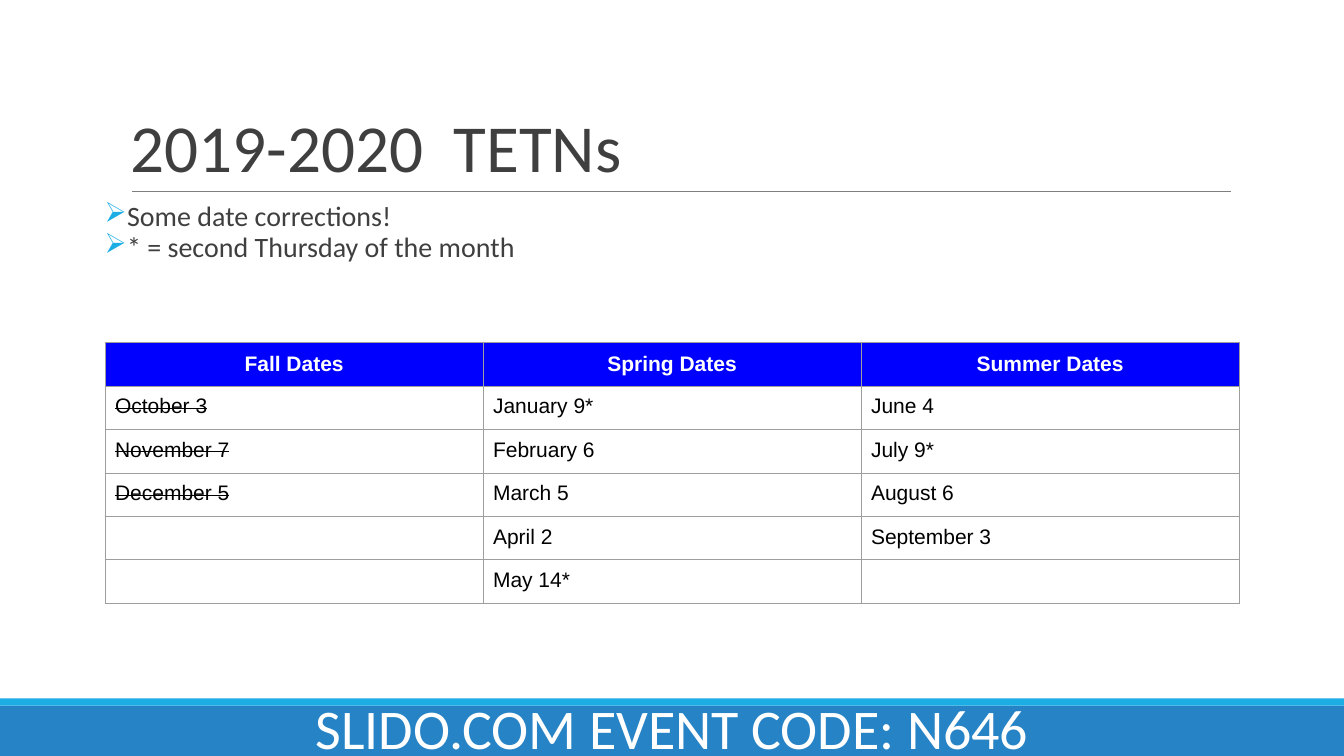
from lxml import etree
from pptx import Presentation
from pptx.dml.color import RGBColor
from pptx.enum.shapes import MSO_CONNECTOR, MSO_SHAPE
from pptx.enum.text import MSO_ANCHOR, PP_ALIGN
from pptx.oxml.ns import qn
from pptx.util import Cm, Pt

STRAIGHT = MSO_CONNECTOR.STRAIGHT
RECTANGLE = MSO_SHAPE.RECTANGLE
LEFT, CENTER = PP_ALIGN.LEFT, PP_ALIGN.CENTER
TOP, MIDDLE, BOTTOM = MSO_ANCHOR.TOP, MSO_ANCHOR.MIDDLE, MSO_ANCHOR.BOTTOM

COLORS = {
    "text": "3F3F3F",
    "accent": "1CADE4",
    "footer": "2683C6",
    "rule": "7F7F7F",
    "header": "0000FF",
    "border": "9E9E9E",
    "white": "FFFFFF",
    "black": "000000",
}
SLIDE_WIDTH, SLIDE_HEIGHT = 33.87, 19.05
NOTES = ["Some date corrections!", "* = second Thursday of the month"]
DATES = [
    ["Fall Dates", "Spring Dates", "Summer Dates"],
    ["October 3", "January 9*", "June 4"],
    ["November 7", "February 6", "July 9*"],
    ["December 5", "March 5", "August 6"],
    ["", "April 2", "September 3"],
    ["", "May 14*", ""],
]
PAST_DATES = {"October 3", "November 7", "December 5"}


def color(name):
    """Return the named colour."""
    return RGBColor.from_string(COLORS[name])


def style(paragraph, font, size, color_name, align=LEFT, bold=False):
    """Set the font and alignment of a paragraph."""
    paragraph.alignment = align
    paragraph.font.name = font
    paragraph.font.size = Pt(size)
    paragraph.font.bold = bold
    paragraph.font.color.rgb = color(color_name)


def add_text_box(page, box, anchor=TOP, side_margin=0.25):
    """Add a wrapping text box and return its text frame."""
    frame = page.shapes.add_textbox(*map(Cm, box)).text_frame
    frame.word_wrap = True
    frame.vertical_anchor = anchor
    frame.margin_left = frame.margin_right = Cm(side_margin)
    frame.margin_top = frame.margin_bottom = Cm(0.13)
    return frame


def add_bullet(paragraph):
    """Give a paragraph a Wingdings arrow bullet with a hanging indent."""
    properties = paragraph._p.get_or_add_pPr()
    properties.set("marL", str(Cm(0.25)))
    properties.set("indent", str(-Cm(0.25)))
    bullet_color = etree.SubElement(properties, qn("a:buClr"))
    etree.SubElement(bullet_color, qn("a:srgbClr"), val=COLORS["accent"])
    etree.SubElement(properties, qn("a:buFont"), typeface="Wingdings", charset="2")
    etree.SubElement(properties, qn("a:buChar"), char="Ø")


def add_bar(page, box, color_name):
    """Add a plain filled bar."""
    bar = page.shapes.add_shape(RECTANGLE, *map(Cm, box))
    bar.shadow.inherit = False
    bar.fill.solid()
    bar.fill.fore_color.rgb = color(color_name)
    bar.line.fill.background()


def add_title(page, box):
    """Add the title with the rule along its bottom edge."""
    left, top, width, height = box
    paragraph = add_text_box(page, box, BOTTOM).paragraphs[0]
    paragraph.text = "2019-2020  TETNs"
    paragraph.line_spacing = 0.85
    style(paragraph, "Calibri", 48, "text")
    start, bottom = left + 0.28, top + height
    rule = page.shapes.add_connector(
        STRAIGHT, Cm(start), Cm(bottom), Cm(start + 27.68), Cm(bottom))
    rule.line.color.rgb = color("rule")
    rule.line.width = Pt(0.75)
    etree.SubElement(rule._element.spPr, qn("a:effectLst"))


def add_notes(page, box):
    """Add the bulleted remarks."""
    frame = add_text_box(page, box, side_margin=0)
    for index, note in enumerate(NOTES):
        paragraph = frame.add_paragraph() if index else frame.paragraphs[0]
        paragraph.text = note
        add_bullet(paragraph)
        paragraph.line_spacing = 0.9
        style(paragraph, "Calibri", 20, "text")


def add_borders(cell):
    """Draw the four borders of a cell."""
    properties = cell._tc.get_or_add_tcPr()
    for index, side in enumerate(("lnL", "lnR", "lnT", "lnB")):
        line = etree.Element(qn(f"a:{side}"), w=str(Pt(0.75)))
        fill = etree.SubElement(line, qn("a:solidFill"))
        etree.SubElement(fill, qn("a:srgbClr"), val=COLORS["border"])
        properties.insert(index, line)


def fill_cell(cell, text, is_header):
    """Fill one table cell with its colour, borders and date."""
    cell.fill.solid()
    cell.fill.fore_color.rgb = color("header" if is_header else "white")
    add_borders(cell)
    if not text:
        return
    cell.vertical_anchor = MIDDLE if is_header else TOP
    cell.margin_left = cell.margin_right = Cm(0.25)
    cell.margin_top = cell.margin_bottom = Cm(0.22)
    paragraph = cell.text_frame.paragraphs[0]
    span = paragraph.add_run()
    span.text = text
    if text in PAST_DATES:
        span._r.get_or_add_rPr().set("strike", "sngStrike")
    if is_header:
        style(paragraph, "Arial", 15, "white", CENTER, True)
    else:
        style(paragraph, "Arial", 15, "black")


def add_dates(page, box):
    """Add the table of dates, with equal rows and columns."""
    row_count, column_count = len(DATES), len(DATES[0])
    table = page.shapes.add_table(row_count, column_count, *map(Cm, box)).table
    for column in table.columns:
        column.width = Cm(box[2] / column_count)
    for row_index, dates in enumerate(DATES):
        table.rows[row_index].height = Cm(box[3] / row_count)
        for column_index, text in enumerate(dates):
            fill_cell(table.cell(row_index, column_index), text, row_index == 0)


def add_footer(page, box):
    """Add the footer band, its accent strip and the event code."""
    left, top, width, height = box
    strip = 0.18
    add_bar(page, (left, top + strip, width, height - strip), "footer")
    add_bar(page, (left, top, width, strip), "accent")
    paragraph = add_text_box(page, (left, top - 0.25, width, 1.96)).paragraphs[0]
    paragraph.text = "SLIDO.COM EVENT CODE: N646"
    style(paragraph, "Calibri", 40, "white", CENTER)


def main():
    """Build and save the deck."""
    deck = Presentation()
    deck.slide_width, deck.slide_height = Cm(SLIDE_WIDTH), Cm(SLIDE_HEIGHT)
    page = deck.slides.add_slide(deck.slide_layouts[6])
    add_title(page, (3.05, 0.79, 27.94, 4.04))
    add_notes(page, (2.64, 4.98, 27.94, 11.18))
    add_dates(page, (2.65, 8.64, 28.58, 6.56))
    add_footer(page, (0, 17.6, SLIDE_WIDTH, SLIDE_HEIGHT - 17.6))
    deck.save("out.pptx")


if __name__ == "__main__":
    main()
